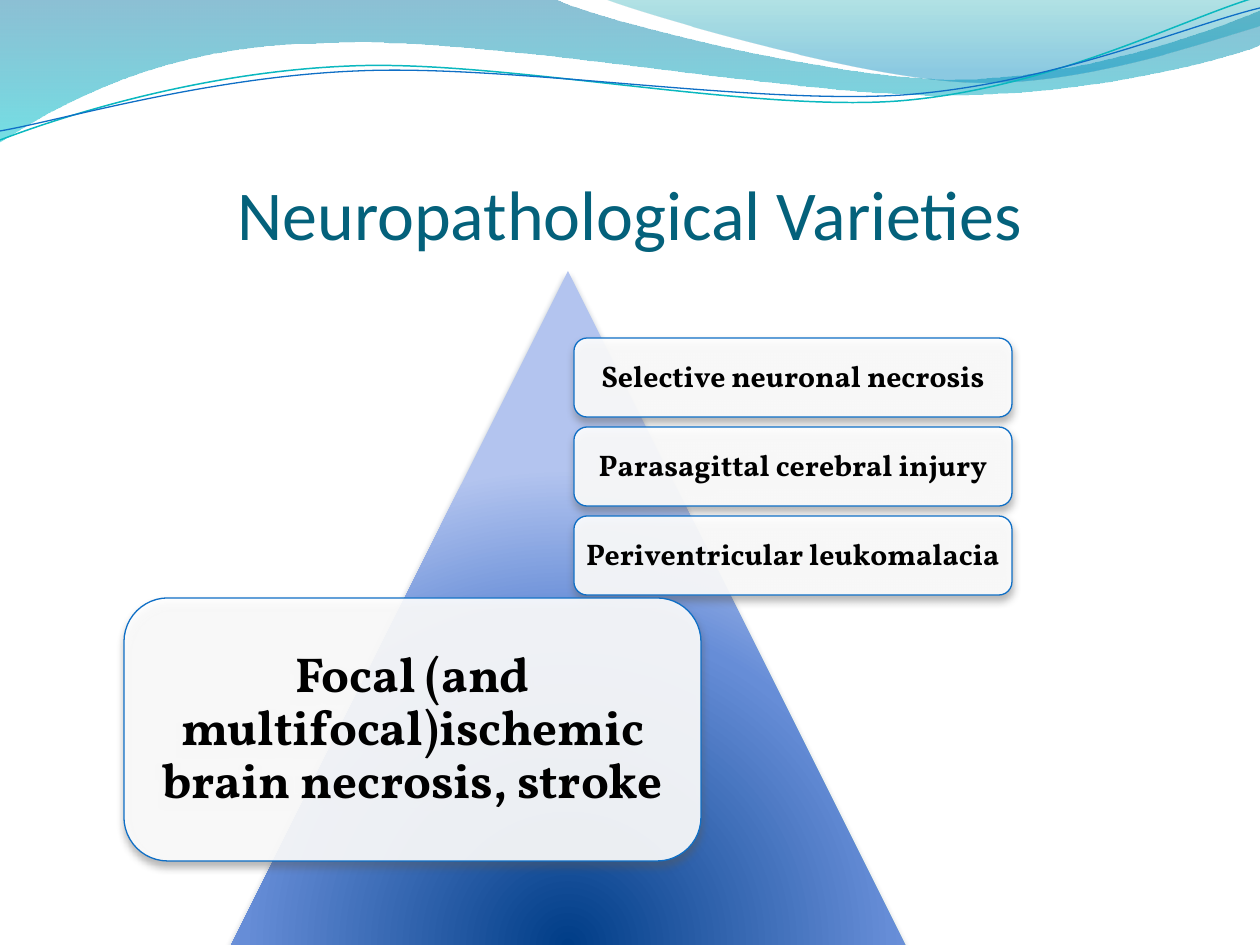
from lxml import etree
from pptx import Presentation
from pptx import util as u
from pptx.dml.color import RGBColor
from pptx.enum import shapes, text
from pptx.oxml import ns

# Content; lengths are px, 126 to the inch
TITLE = "Neuropathological Varieties"
VARIETIES = [
    "Selective neuronal necrosis",
    "Parasagittal cerebral injury",
    "Periventricular leukomalacia",
]
MAIN_VARIETY = "Focal (and multifocal)ischemic brain necrosis, stroke"

# Outlines: a start point, then lines (1 point) or cubic curves (3 points)
# Gradient stops: position, colour, opacity
WAVES = [
    ([[(0, -1)], [(554, -1)], [(600, 21), (837, 79), (955, 79)],
      [(1075, 79), (1207, 33), (1260, 11)], [(1261, 45)],
      [(1239, 55), (1096, 96), (940, 95)], [(784, 95), (481, 35), (324, 43)],
      [(163, 44), (58, 105), (-1, 142)]],
     [(0, "0074A1", 45), (100, "00C6CF", 55)]),
    ([[(604, -1)], [(641, 14), (859, 78), (969, 82)],
      [(1079, 87), (1211, 40), (1260, 26)], [(1260, 0)]],
     [(0, "00A1A9", 30), (80, "008BBF", 45)]),
]
STRANDS = [
    ([[(0, 140)], [(60, 117), (199, 72), (349, 66)],
      [(498, 59), (747, 112), (898, 101)],
      [(1050, 89), (1182, 19), (1257, -3)]], "0AB8BF", 0.85),
    ([[(0, 131)], [(59, 121), (207, 77), (357, 71)],
      [(508, 64), (752, 105), (903, 95)],
      [(1053, 84), (1186, 26), (1260, 8)]], "0F6FC6", 0.75),
]
PYRAMID_STOPS = [(0, "003D87", 100), (68, "668DD7", 100), (100, "B3C4EF", 100)]
LINEAR = '<a:lin ang="5400000" scaled="0"/>'
RADIAL = ('<a:path path="circle"><a:fillToRect l="50000" t="130000" '
          'r="50000" b="-30000"/></a:path>')


def px(value):
    return u.Emu(round(value * 914400 / 126))


def rgb(value):
    return RGBColor.from_string(value)


def xml(markup):
    head, tail = markup.split(">", 1)
    return etree.fromstring(f"{head} {ns.nsdecls('a')}>{tail}")


def color_xml(color, opacity):
    return (f'<a:srgbClr val="{color}"><a:alpha val="{opacity * 1000}"/>'
            '</a:srgbClr>')


def set_fill(shape, markup):
    shape.fill.solid()
    properties = shape._element.spPr
    properties.replace(properties.find(ns.qn("a:solidFill")), xml(markup))


def set_gradient(shape, stops, direction):
    stop_list = "".join(
        f'<a:gs pos="{position * 1000}">{color_xml(color, opacity)}</a:gs>'
        for position, color, opacity in stops)
    set_fill(shape, f"<a:gradFill><a:gsLst>{stop_list}</a:gsLst>"
                    f"{direction}</a:gradFill>")


def set_shadow(shape, color):
    shape.shadow.inherit = False
    effects = shape._element.spPr.find(ns.qn("a:effectLst"))
    effects.append(xml(
        f'<a:outerShdw blurRad="{u.Pt(4.5)}" dist="{u.Pt(3)}" dir="5400000" '
        f'rotWithShape="0">{color_xml(color, 48)}</a:outerShdw>'))


def add_outline(slide, outline, close):
    points = [(px(x), px(y)) for segment in outline for x, y in segment]
    builder = slide.shapes.build_freeform(*points[0], scale=1.0)
    builder.add_line_segments(points[1:], close=close)
    shape = builder.convert_to_shape()
    shape.shadow.inherit = False

    # Join each run of three lines into one cubic curve
    lines = iter(list(shape._element.iter(ns.qn("a:lnTo"))))
    for segment in outline[1:]:
        group = [next(lines) for _ in segment]
        if len(group) == 3:
            curve = etree.Element(ns.qn("a:cubicBezTo"))
            group[0].addprevious(curve)
            for line in group:
                curve.append(line[0])
                line.getparent().remove(line)
    return shape


def write(frame, words, font, size, color, bold=False):
    frame.word_wrap = True
    frame.auto_size = text.MSO_AUTO_SIZE.NONE
    paragraph = frame.paragraphs[0]
    paragraph.alignment = text.PP_ALIGN.CENTER
    run = paragraph.add_run()
    run.text = words
    run.font.name = font
    run.font.size = u.Pt(size)
    run.font.bold = bold
    run.font.color.rgb = rgb(color)
    return paragraph


def add_card(slide, words, box, size, inset):
    card = slide.shapes.add_shape(
        shapes.MSO_SHAPE.ROUNDED_RECTANGLE, *map(px, box))
    set_fill(card, f"<a:solidFill>{color_xml('FFFFFF', 90)}</a:solidFill>")
    card.line.color.rgb = rgb("0F6FC6")
    card.line.width = u.Pt(0.75)
    set_shadow(card, "5A5A5A")
    frame = card.text_frame
    frame.margin_left = frame.margin_right = px(inset)
    frame.margin_top = frame.margin_bottom = px(inset)
    frame.vertical_anchor = text.MSO_ANCHOR.MIDDLE
    write(frame, words, "Vollkorn", size, "000000", True).line_spacing = 0.9


def main():
    presentation = Presentation()
    presentation.slide_width, presentation.slide_height = px(1260), px(945)
    slide = presentation.slides.add_slide(presentation.slide_layouts[5])

    # Wave banner
    for outline, stops in WAVES:
        wave = add_outline(slide, outline, True)
        set_gradient(wave, stops, LINEAR)
        wave.line.fill.background()
    for outline, color, width in STRANDS:
        strand = add_outline(slide, outline, False)
        strand.fill.background()
        strand.line.color.rgb = rgb(color)
        strand.line.width = u.Pt(width)

    # Title
    title = slide.shapes.title
    title.left, title.top, title.width, title.height = map(
        px, (63, 97, 1134, 158))
    frame = title.text_frame
    frame.margin_left = frame.margin_right = frame.margin_bottom = 0
    frame.margin_top = px(6)
    frame.vertical_anchor = text.MSO_ANCHOR.BOTTOM
    write(frame, TITLE, "Calibri", 40, "04617B")

    # Pyramid
    pyramid = slide.shapes.add_shape(
        shapes.MSO_SHAPE.ISOSCELES_TRIANGLE, *map(px, (231, 271, 674, 674)))
    set_gradient(pyramid, PYRAMID_STOPS, RADIAL)
    pyramid.line.fill.background()
    set_shadow(pyramid, "042747")

    # Variety cards; the rounded corners add to the text inset
    for row, words in enumerate(VARIETIES):
        add_card(slide, words, (574, 338 + row * 89, 438, 79), 17, 5)
    add_card(slide, MAIN_VARIETY, (124, 598, 577, 263), 28, 2)

    presentation.save("out.pptx")


if __name__ == "__main__":
    main()
